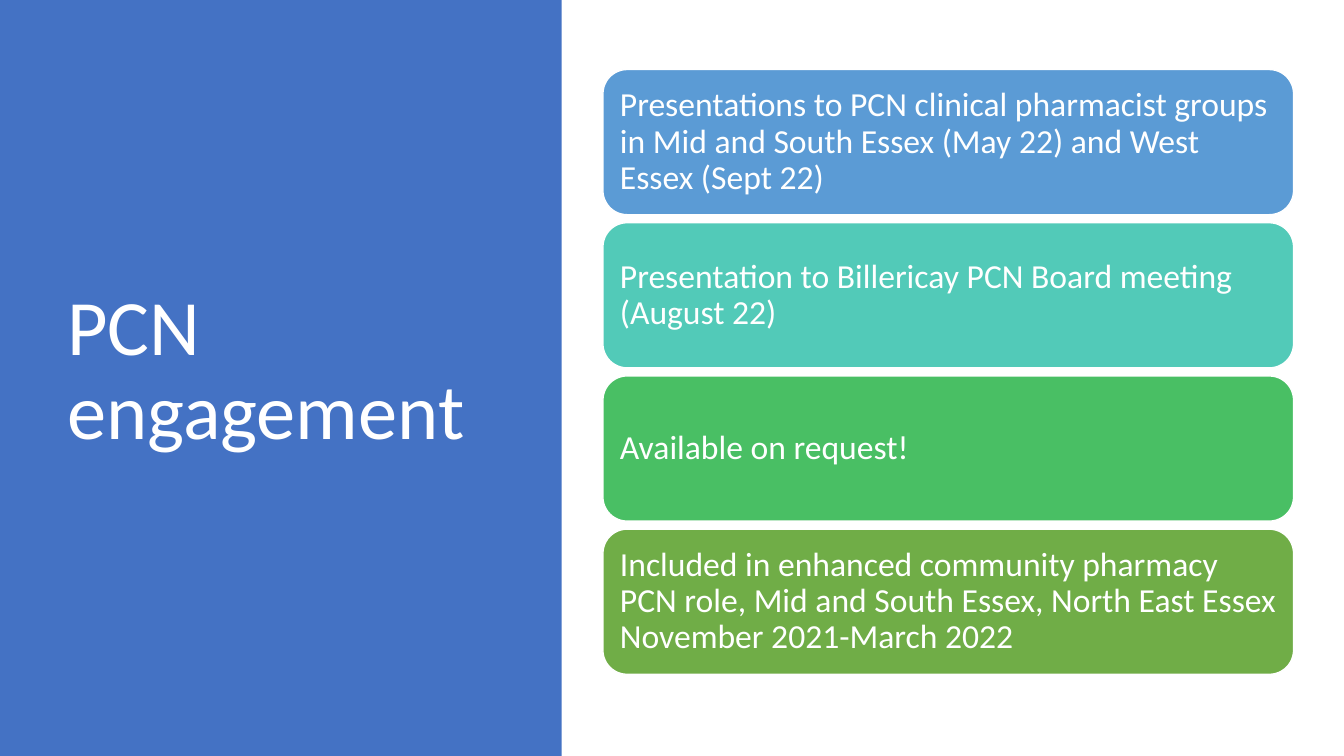
import pptx
import pptx.util
from pptx.dml.color import RGBColor
from pptx.enum.shapes import MSO_SHAPE
from pptx.enum.text import MSO_ANCHOR, PP_ALIGN

WHITE = RGBColor(0xFF, 0xFF, 0xFF)
NAVY = RGBColor(0x44, 0x72, 0xC4)
BLUE = RGBColor(0x5B, 0x9B, 0xD5)
TEAL = RGBColor(0x52, 0xCA, 0xB8)
GREEN = RGBColor(0x49, 0xBF, 0x64)
OLIVE = RGBColor(0x70, 0xAD, 0x47)


def px(n):
    return pptx.util.Emu(n * 9144)


def write(shape, text, size, inset):
    frame = shape.text_frame
    frame.word_wrap = True
    frame.vertical_anchor = MSO_ANCHOR.MIDDLE
    frame.margin_left = frame.margin_right = px(inset)
    frame.text = text
    para = frame.paragraphs[0]
    para.alignment = PP_ALIGN.LEFT
    para.line_spacing = 0.9
    para.font.size = pptx.util.Pt(size)
    para.font.name = "Calibri"
    para.font.color.rgb = WHITE


deck = pptx.Presentation()
deck.slide_width = px(1333)
deck.slide_height = px(750)
slide = deck.slides.add_slide(deck.slide_layouts[6])

panel = slide.shapes.add_shape(MSO_SHAPE.RECTANGLE, 0, 0, px(557), px(750))
panel.shadow.inherit = False
panel.fill.solid()
panel.fill.fore_color.rgb = NAVY
panel.line.fill.background()

title = slide.shapes.add_textbox(px(57), px(68), px(416), px(602))
write(title, "PCN engagement", 56, 10)

cards = [
    (BLUE, "Presentations to PCN clinical pharmacist groups in Mid and South Essex (May 22) and West Essex (Sept 22)"),
    (TEAL, "Presentation to Billericay PCN Board meeting (August 22)"),
    (GREEN, "Available on request!"),
    (OLIVE, "Included in enhanced community pharmacy PCN role, Mid and South Essex, North East Essex November 2021-March 2022"),
]
for row, (color, text) in enumerate(cards):
    card = slide.shapes.add_shape(
        MSO_SHAPE.ROUNDED_RECTANGLE, px(598), px(69 + 152 * row), px(685), px(144))
    card.shadow.inherit = False
    card.fill.solid()
    card.fill.fore_color.rgb = color
    card.line.color.rgb = WHITE
    card.line.width = pptx.util.Pt(1)
    write(card, text, 24, 10)

deck.save("out.pptx")
